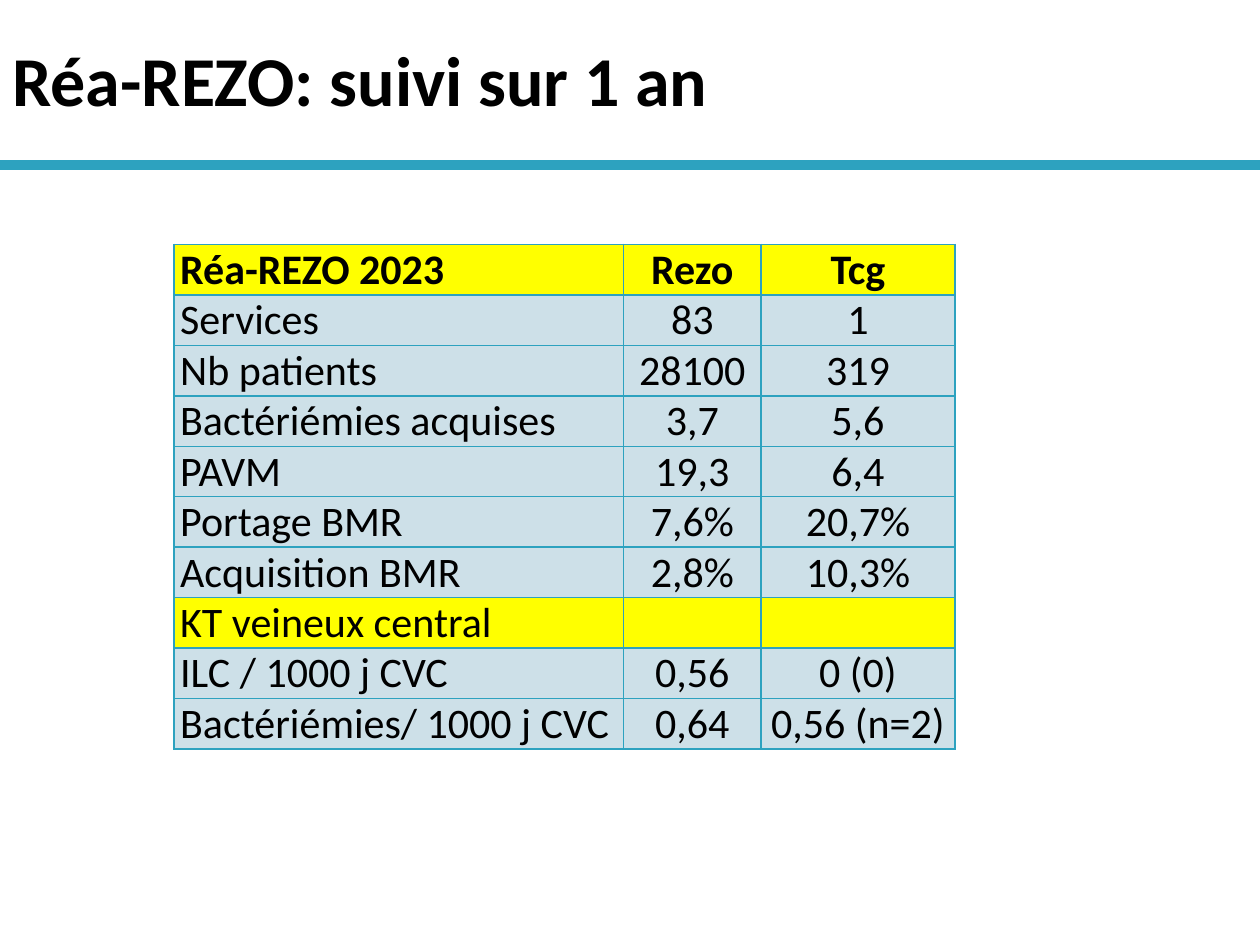
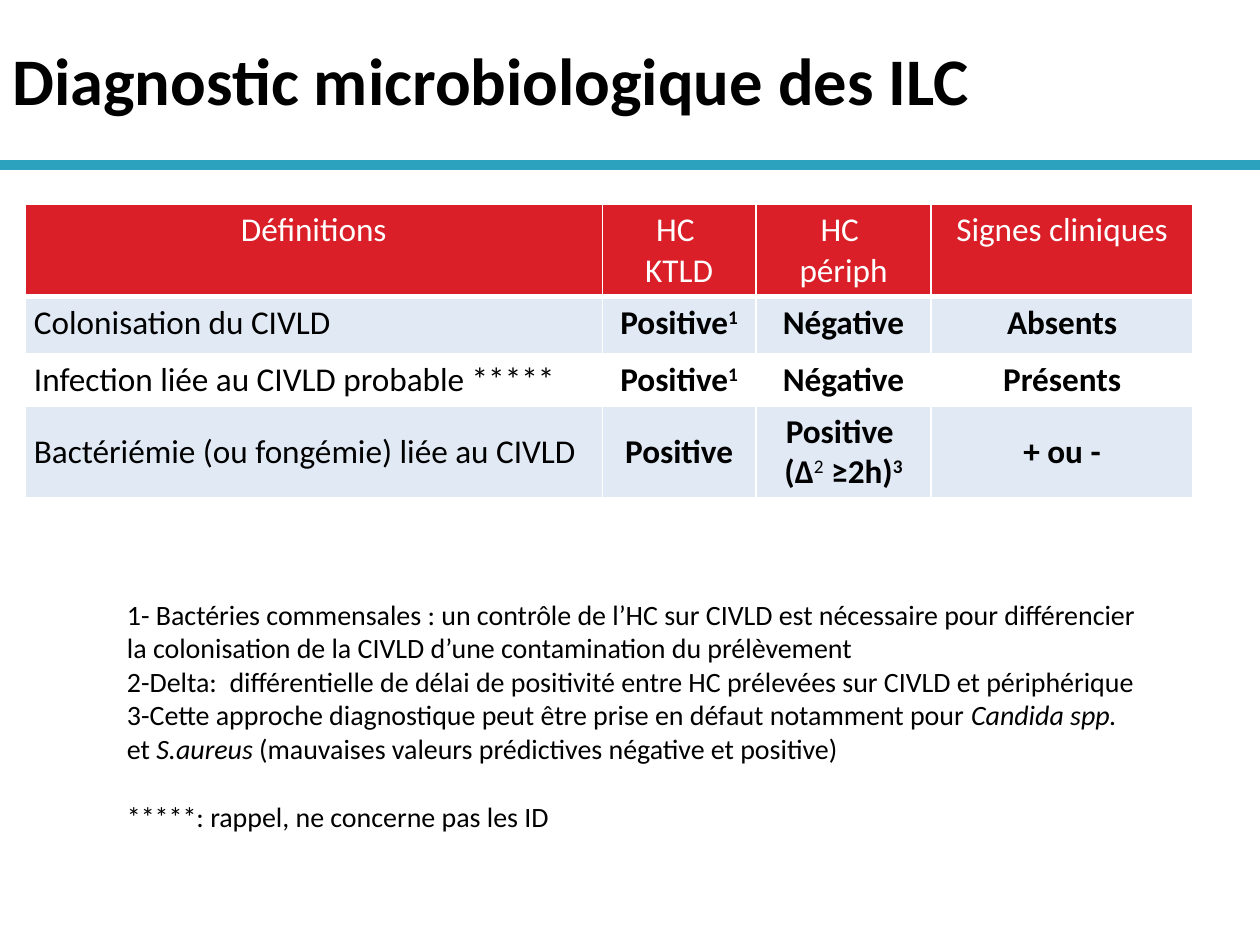
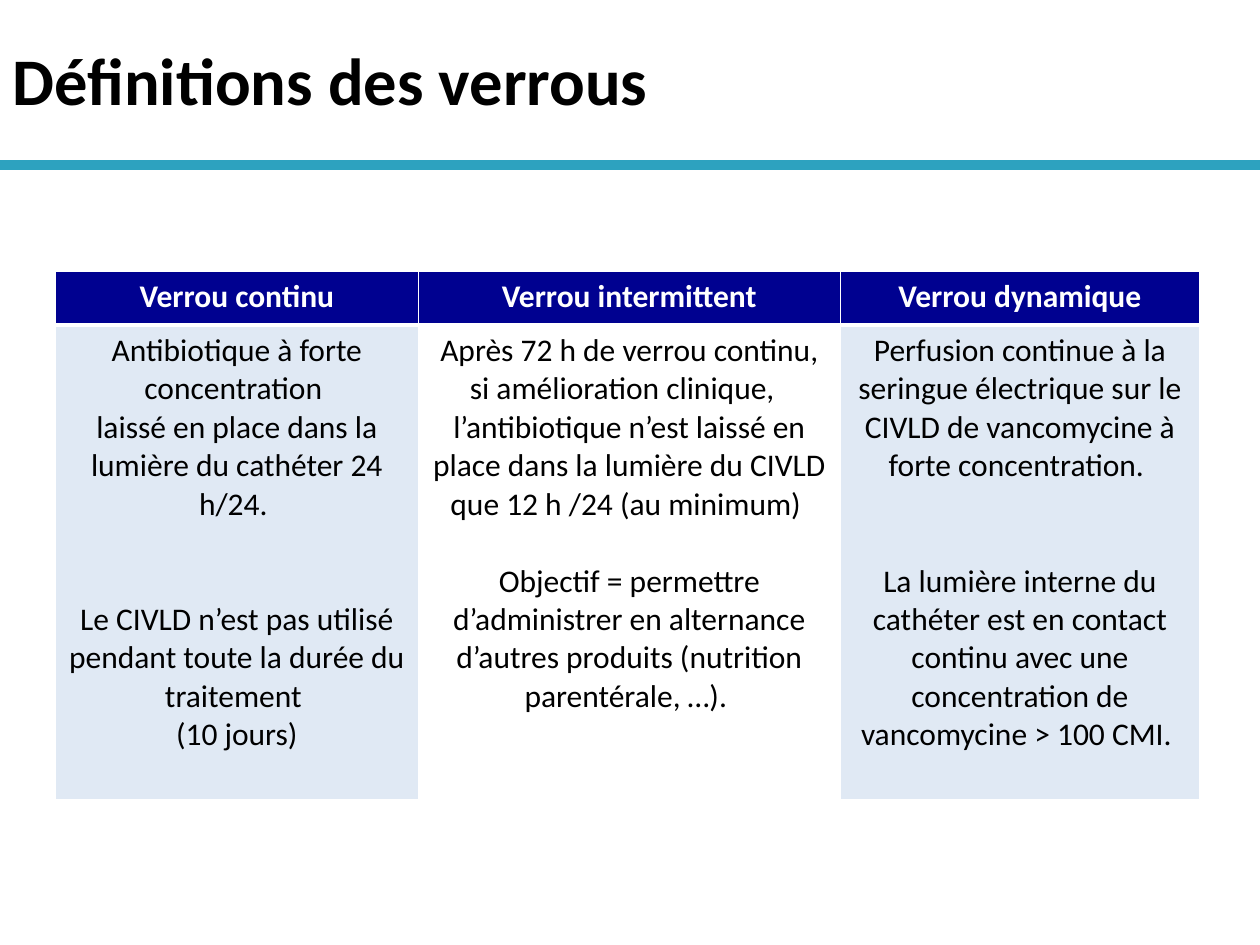
from lxml import etree
from pptx import Presentation
from pptx.dml.color import RGBColor
from pptx.enum import shapes, text
from pptx.oxml import ns
from pptx.util import Inches, Pt

FONT = "Calibri"
BLACK, WHITE, TEAL = "000000", "FFFFFF", "2DA2BF"
YELLOW, MIST, RED, PALE, NAVY = "FFFF00", "CDE0E8", "DA1F28", "E0E9F4", "000190"
LINE = 1.22  # height of a text line, relative to the font size
LEFT, MID = text.PP_ALIGN.LEFT, text.PP_ALIGN.CENTER
TOP, HALF = text.MSO_ANCHOR.TOP, text.MSO_ANCHOR.MIDDLE

# A body is a string or a list of paragraphs; a number is a gap in lines.
# A paragraph is a string or a list of (words, marks):
# s superscript, i italic, n not bold.
REZO = [
    ["Réa-REZO 2023", "Rezo", "Tcg"],
    ["Services", "83", "1"],
    ["Nb patients", "28100", "319"],
    ["Bactériémies acquises", "3,7", "5,6"],
    ["PAVM", "19,3", "6,4"],
    ["Portage BMR", "7,6%", "20,7%"],
    ["Acquisition BMR", "2,8%", "10,3%"],
    ["KT veineux central", "", ""],
    ["ILC / 1000 j CVC", "0,56", "0 (0)"],
    ["Bactériémies/ 1000 j CVC", "0,64", "0,56 (n=2)"],
]
POS = [[("Positive", ""), ("1", "s")]]
SIGNS = [
    ["Définitions", ["HC ", "KTLD"], ["HC ", "périph"], "Signes cliniques"],
    ["Colonisation du CIVLD ", POS, "Négative", "Absents"],
    ["Infection liée au CIVLD probable *****", POS, "Négative", "Présents"],
    ["Bactériémie (ou fongémie) liée au CIVLD", "Positive",
     ["Positive ", [("(∆", ""), ("2", "sn"), (" ≥2h)", ""), ("3", "s")]],
     "+ ou -"],
]
NOTES = [
    "1- Bactéries commensales : un contrôle de l’HC sur CIVLD est nécessaire "
    "pour différencier la colonisation de la CIVLD d’une contamination du "
    "prélèvement",
    "2-Delta:  différentielle de délai de positivité entre HC prélevées sur "
    "CIVLD et périphérique",
    [("3-Cette approche diagnostique peut être prise en défaut notamment pour ", ""),
     ("Candida spp.", "i"), (" et ", ""), ("S.aureus", "i"),
     (" (mauvaises valeurs prédictives négative et positive)", "")],
    1,
    "*****: rappel, ne concerne pas les ID",
]
LOCKS = [
    ["Verrou continu", "Verrou intermittent", "Verrou dynamique"],
    [
        ["Antibiotique à forte concentration ",
         "laissé en place dans la lumière du cathéter 24 h/24. ",
         2,
         "Le CIVLD n’est pas utilisé pendant toute la durée du traitement ",
         "(10 jours)"],
        ["Après 72 h de verrou continu,",
         "si amélioration clinique,  ",
         "l’antibiotique n’est laissé en place dans la lumière du CIVLD que "
         "12 h /24 (au minimum) ",
         1,
         "Objectif = permettre d’administrer en alternance d’autres produits "
         "(nutrition parentérale, …). "],
        ["Perfusion continue à la seringue électrique sur le CIVLD de "
         "vancomycine à forte concentration. ",
         2,
         "La lumière interne du cathéter est en contact continu avec une "
         "concentration de vancomycine > 100 CMI. "],
    ],
]


def rgb(code):
    return RGBColor.from_string(code)


def write(frame, body, size, color=BLACK, bold=False, align=LEFT):
    frame.word_wrap = True
    gap, fresh = 0, True
    for item in [body] if isinstance(body, str) else body:
        if isinstance(item, int):
            gap = item
            continue
        para = frame.paragraphs[0] if fresh else frame.add_paragraph()
        fresh = False
        para.alignment = align
        para.space_before = Pt(round(gap * size * LINE, 1))
        gap = 0
        font = para.font
        font.name, font.size, font.bold = FONT, Pt(size), bold
        font.color.rgb = rgb(color)
        for words, marks in [(item, "")] if isinstance(item, str) else item:
            run = para.add_run()
            run.text = words
            if "i" in marks:
                run.font.italic = True
            if "n" in marks:
                run.font.bold = False
            if "s" in marks:
                run.font._element.set("baseline", "30000")


def edge(cell, side, color, width):
    """Draw one border of a cell; side is L, R, T or B."""
    line = etree.SubElement(cell._tc.get_or_add_tcPr(), ns.qn("a:ln" + side),
                            w=str(Pt(width)))
    fill = etree.SubElement(line, ns.qn("a:solidFill"))
    etree.SubElement(fill, ns.qn("a:srgbClr"), val=color)


def grid(slide, rows, spot, wides, highs, look, border, pad, heavy=1):
    """Add a table; look(row, col) gives the fill, anchor and text style."""
    frame = slide.shapes.add_table(len(rows), len(wides), *map(Inches, spot),
                                   Inches(sum(wides)), Inches(sum(highs)))
    table = frame.table
    table.first_row = table.horz_banding = False
    for col, wide in zip(table.columns, wides):
        col.width = Inches(wide)
    for r, (row, high) in enumerate(zip(rows, highs)):
        table.rows[r].height = Inches(high)
        for c, body in enumerate(row):
            cell = table.cell(r, c)
            fill, anchor, style = look(r, c)
            for side in "LRTB":
                thick = heavy if (r, side) in ((0, "B"), (1, "T")) else 1
                edge(cell, side, border, thick)
            cell.fill.solid()
            cell.fill.fore_color.rgb = rgb(fill)
            cell.vertical_anchor = anchor
            cell.margin_left = cell.margin_right = Inches(pad[0])
            cell.margin_top = cell.margin_bottom = Inches(pad[1])
            write(cell.text_frame, body, **style)


def box(slide, body, spot, anchor=TOP, **style):
    frame = slide.shapes.add_textbox(*map(Inches, spot)).text_frame
    frame.vertical_anchor = anchor
    write(frame, body, **style)


def page(deck, title, size):
    slide = deck.slides.add_slide(deck.slide_layouts[6])
    rule = slide.shapes.add_connector(shapes.MSO_CONNECTOR.STRAIGHT, 0,
                                      Inches(1.31), Inches(10), Inches(1.31))
    rule.line.color.rgb = rgb(TEAL)
    rule.line.width = Pt(6)
    etree.SubElement(rule._element.spPr, ns.qn("a:effectLst"))
    box(slide, title, (0, 0, 10, 1.25), HALF, size=size, bold=True)
    return slide


def rezo(r, c):
    style = dict(size=24, bold=r == 0, align=MID if c else LEFT)
    return YELLOW if r in (0, 7) else MIST, HALF, style


def signs(r, c):
    if r == 0:
        return RED, TOP, dict(size=19, color=WHITE, align=MID)
    style = dict(size=19, bold=c > 0, align=MID if c else LEFT)
    return PALE if r % 2 else WHITE, HALF if r == 3 else TOP, style


def locks(r, c):
    if r == 0:
        return NAVY, TOP, dict(size=18, color=WHITE, bold=True, align=MID)
    return WHITE if c % 2 else PALE, TOP, dict(size=18, align=MID)


def main():
    deck = Presentation()
    deck.slide_width, deck.slide_height = Inches(10), Inches(7.5)

    slide = page(deck, "Réa-REZO: suivi sur 1 an", 40)
    grid(slide, REZO, (1.38, 1.94), (3.57, 1.09, 1.54), [0.38] * len(REZO),
         rezo, TEAL, (0.05, 0))

    slide = page(deck, "Diagnostic microbiologique des ILC", 38)
    grid(slide, SIGNS, (0.2, 1.62), (4.58, 1.22, 1.39, 2.08),
         (0.37, 0.45, 0.38, 0.42), signs, WHITE, (0.07, 0.05), 3)
    box(slide, NOTES, (0.91, 4.69, 8.24, 2.26), size=16)

    slide = page(deck, "Définitions des verrous", 38)
    grid(slide, LOCKS, (0.44, 2.15), (2.88, 3.35, 2.85), (0.43, 3.77),
         locks, WHITE, (0.07, 0.05), 3)

    deck.save("out.pptx")


if __name__ == "__main__":
    main()
